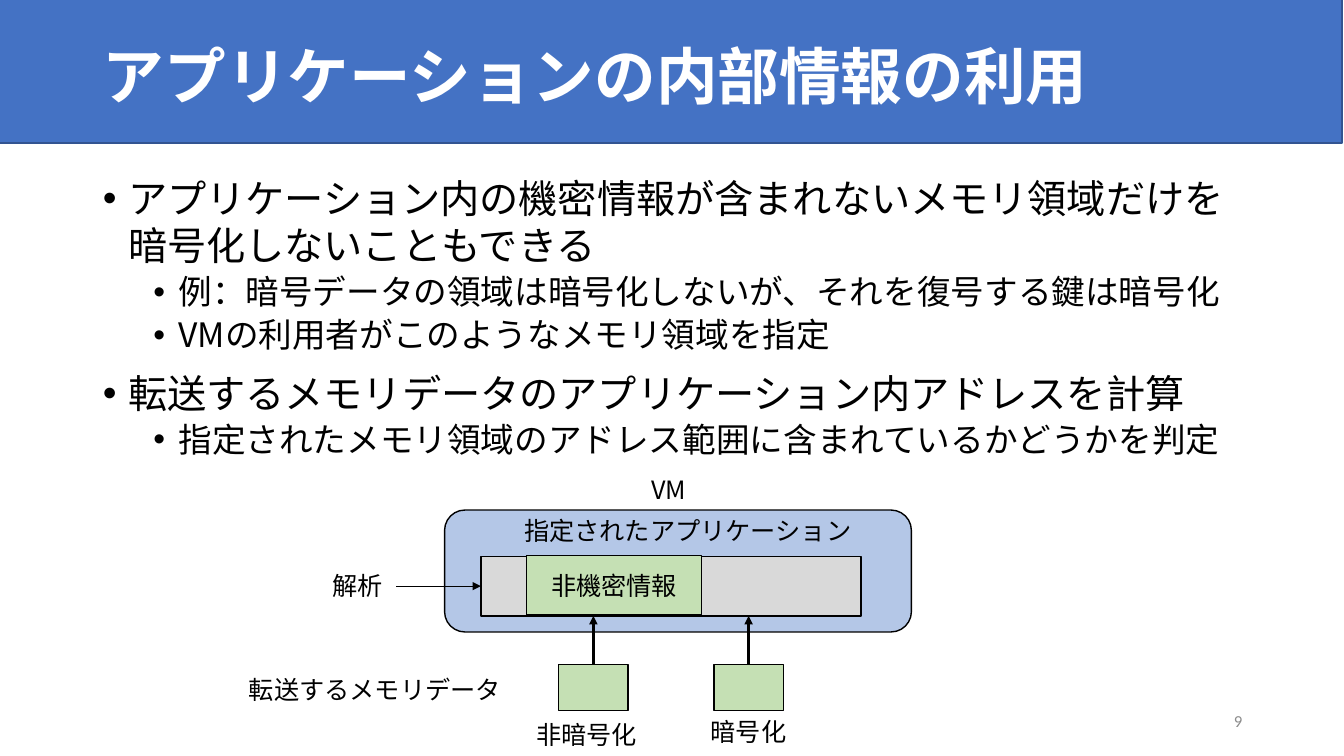
from pptx import Presentation
from pptx.dml.color import RGBColor
from pptx.enum.shapes import MSO_CONNECTOR as Line, MSO_SHAPE as Shape
from pptx.enum.text import MSO_ANCHOR as Anchor, MSO_AUTO_SIZE as AutoSize, PP_ALIGN as Align
from pptx.oxml.ns import qn
from pptx.util import Inches, Pt
from lxml.etree import SubElement

FONT = "Noto Sans CJK JP"
COLORS = {"banner": "4472C4", "edge": "325491", "vm": "B4C7E7", "memory": "D9D9D9",
          "data": "C5E0B4", "ink": "000000", "white": "FFFFFF", "number": "8C8C8C"}
TITLE = "アプリケーションの内部情報の利用"
POINTS = [
    (0, "アプリケーション内の機密情報が含まれないメモリ領域だけを暗号化しないこともできる"),
    (1, "例：暗号データの領域は暗号化しないが、それを復号する鍵は暗号化"),
    (1, "VMの利用者がこのようなメモリ領域を指定"),
    (0, "転送するメモリデータのアプリケーション内アドレスを計算"),
    (1, "指定されたメモリ領域のアドレス範囲に含まれているかどうかを判定"),
]
LEVELS = [
    {"size": 28, "before": 10, "spacing": 1.0, "margin": 0.25},
    {"size": 24, "before": 5, "spacing": 0.9, "margin": 0.75},
]
LABELS = [
    ("VM", 6.36, 4.66, 0.6),
    ("指定されたアプリケーション", 5.1, 5.06, 3.48),
    ("解析", 3.2, 5.61, 0.71),
    ("転送するメモリデータ", 2.37, 6.64, 2.73),
    ("非暗号化", 5.22, 7.09, 1.21),
    ("暗号化", 6.95, 7.06, 0.96),
]
VM = (4.41, 5.06, 4.63, 1.21)
MEMORY = (4.77, 5.52, 3.77, 0.59)
PUBLIC_AREA = (5.22, 5.51, 1.74, 0.59)
DATA_LEFTS = (5.54, 7.08)
DATA_TOP, DATA_WIDTH, DATA_HEIGHT = 6.59, 0.69, 0.46

deck = Presentation()
deck.slide_width, deck.slide_height = Inches(13.33), Inches(7.5)
slide = deck.slides.add_slide(deck.slide_layouts[1])
shapes = slide.shapes


def color(name):
    return RGBColor.from_string(COLORS[name])


def write(paragraph, text, size, ink="ink", bold=False, font=FONT):
    run = paragraph.add_run()
    run.text = text
    run.font.size, run.font.bold, run.font.name = Pt(size), bold, font
    run.font.color.rgb = color(ink)
    SubElement(run.font._element, qn("a:ea")).set("typeface", font)


def place(holder, left, top, width, height):
    holder.left, holder.top = Inches(left), Inches(top)
    holder.width, holder.height = Inches(width), Inches(height)
    holder.text_frame.auto_size = AutoSize.NONE
    return holder.text_frame


def box(area, fill, edge="ink", kind=Shape.RECTANGLE):
    block = shapes.add_shape(kind, *map(Inches, area))
    block.shadow.inherit = False
    block.fill.solid()
    block.fill.fore_color.rgb = color(fill)
    block.line.color.rgb = color(edge)
    block.line.width = Pt(1)
    return block


def arrow(start, end, width):
    link = shapes.add_connector(Line.STRAIGHT, *map(Inches, start + end))
    link.line.color.rgb = color("ink")
    link.line.width = Pt(width)
    SubElement(link.line._get_or_add_ln(), qn("a:tailEnd")).set("type", "triangle")
    SubElement(link._element.spPr, qn("a:effectLst"))


banner = box((-0.02, -0.01, 13.33, 1.43), "banner", "edge")
shapes._spTree.insert(2, banner._element)

heading = place(shapes.title, 0.92, 0.07, 11.5, 1.44)
heading.vertical_anchor = Anchor.MIDDLE
heading.paragraphs[0].alignment = Align.LEFT
heading.paragraphs[0].line_spacing = 0.9
write(heading.paragraphs[0], TITLE, 44, "white", True)

body = place(slide.placeholders[1], 0.92, 1.68, 11.5, 5.07)
for index, (level, text) in enumerate(POINTS):
    point = body.add_paragraph() if index else body.paragraphs[0]
    style = LEVELS[level]
    point.level = level
    point.line_spacing, point.space_before = style["spacing"], Pt(style["before"])
    props = point._p.get_or_add_pPr()
    props.set("marL", str(Inches(style["margin"])))
    props.set("indent", str(Inches(-0.25)))
    SubElement(props, qn("a:buFont")).set("typeface", "Arial")
    SubElement(props, qn("a:buChar")).set("char", "•")
    write(point, text, style["size"])

box(VM, "vm", kind=Shape.ROUNDED_RECTANGLE)
box(MEMORY, "memory")
public = box(PUBLIC_AREA, "data").text_frame
public.vertical_anchor = Anchor.MIDDLE
public.paragraphs[0].alignment = Align.CENTER
write(public.paragraphs[0], "非機密情報", 18)

memory_left, memory_top, _, memory_height = MEMORY
for left in DATA_LEFTS:
    box((left, DATA_TOP, DATA_WIDTH, DATA_HEIGHT), "data")
    center = left + DATA_WIDTH / 2
    arrow((center, DATA_TOP), (center, memory_top + memory_height), 2)
middle = memory_top + memory_height / 2
arrow((3.93, middle), (memory_left, middle), 0.5)

for text, left, top, width in LABELS:
    label = shapes.add_textbox(*map(Inches, (left, top, width, 0.4))).text_frame
    label.word_wrap = False
    label.auto_size = AutoSize.SHAPE_TO_FIT_TEXT
    write(label.paragraphs[0], text, 18)

number = shapes.add_textbox(*map(Inches, (9.42, 6.95, 3, 0.4))).text_frame
number.word_wrap = True
number.vertical_anchor = Anchor.MIDDLE
number.paragraphs[0].alignment = Align.RIGHT
write(number.paragraphs[0], "9", 12, "number", font="Calibri")

deck.save("out.pptx")
